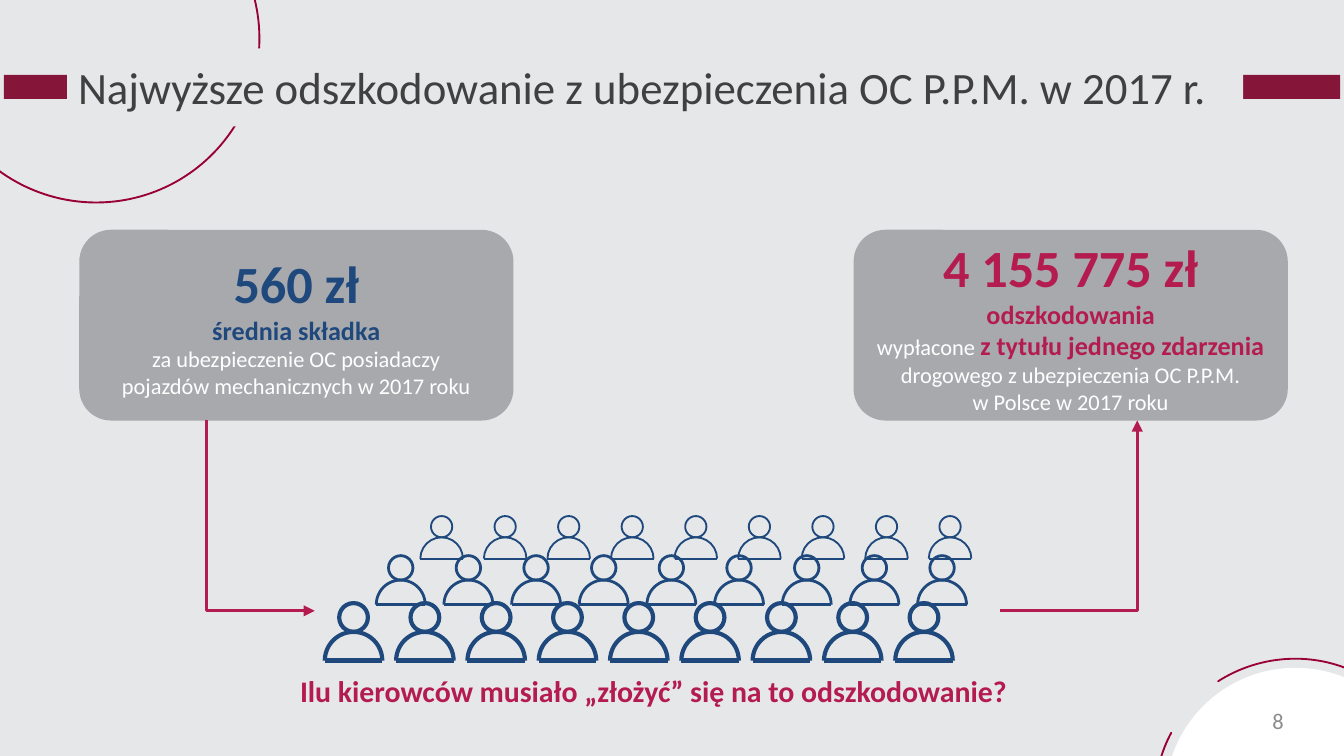
from pptx import Presentation
from pptx.dml.color import RGBColor
from pptx.enum.shapes import MSO_CONNECTOR, MSO_SHAPE
from pptx.enum.text import MSO_ANCHOR, MSO_AUTO_SIZE, PP_ALIGN
from pptx.oxml.ns import qn
from pptx.util import Pt
from lxml import etree

ARC, RECT, OVAL = MSO_SHAPE.BLOCK_ARC, MSO_SHAPE.RECTANGLE, MSO_SHAPE.OVAL
ROUNDED = MSO_SHAPE.ROUNDED_RECTANGLE
STRAIGHT, ELBOW = MSO_CONNECTOR.STRAIGHT, MSO_CONNECTOR.ELBOW
LEFT, CENTER, RIGHT = PP_ALIGN.LEFT, PP_ALIGN.CENTER, PP_ALIGN.RIGHT
TOP, MIDDLE = MSO_ANCHOR.TOP, MSO_ANCHOR.MIDDLE

FONT = "Calibri"
BACKGROUND, WHITE, GREY = "E6E7E9", "FFFFFF", "A8A9AD"
BURGUNDY, ARC_LINE = "86153A", "990033"
CRIMSON, NAVY = "B41C4F", "1F497D"

# Each line is a list of runs: text, size, colour, bold
PREMIUM = [
    [("560 zł", 28, NAVY, True)],
    [("średnia składka", 14, NAVY, True)],
    [("za ubezpieczenie OC posiadaczy", 12, WHITE, False)],
    [("pojazdów mechanicznych w 2017 roku", 12, WHITE, False)],
]
COMPENSATION = [
    [("4 155 775 zł", 28, CRIMSON, True)],
    [("odszkodowania", 14, CRIMSON, True)],
    [("wypłacone ", 12, WHITE, False),
     ("z tytułu jednego zdarzenia", 14, CRIMSON, True)],
    [("drogowego z ubezpieczenia OC P.P.M.", 12, WHITE, False)],
    [("w Polsce w 2017 roku", 12, WHITE, False)],
]

# Rows of drivers, back to front: left, top, head diameter, step, line width
DRIVERS_PER_ROW = 9
DRIVER_ROWS = [
    (225.2, 276.5, 11.4, 34.05, 1),
    (201.6, 297.7, 13.1, 36.25, 1.5),
    (174, 323.1, 15.4, 38.2, 2.25),
]


def rgb(color):
    return RGBColor.from_string(color)


def style_font(font, size, color, bold=False):
    font.name, font.size, font.bold = FONT, Pt(size), bold
    font.color.rgb = rgb(color)


def add_shape(shapes, kind, left, top, width, height, fill=None, line=None,
              line_width=1):
    shape = shapes.add_shape(kind, Pt(left), Pt(top), Pt(width), Pt(height))
    shape.shadow.inherit = False
    if fill:
        shape.fill.solid()
        shape.fill.fore_color.rgb = rgb(fill)
    else:
        shape.fill.background()
    if line:
        shape.line.color.rgb = rgb(line)
        shape.line.width = Pt(line_width)
    else:
        shape.line.fill.background()
    return shape


def add_arc(shapes, left, top, width, height, rotation, start):
    arc = add_shape(shapes, ARC, left, top, width, height, BURGUNDY, ARC_LINE)
    arc.rotation = rotation
    for index, value in enumerate((start, 1.76, 0)):
        arc.adjustments[index] = value


def add_line(shapes, kind, start, end, color, width):
    line = shapes.add_connector(kind, *(Pt(value) for value in start + end))
    line.line.color.rgb = rgb(color)
    line.line.width = Pt(width)
    etree.SubElement(line.element.spPr, qn("a:effectLst"))
    return line


def add_elbow(shapes, start, end, arrow_end):
    """Run horizontally from start, then vertically to end."""
    elbow = add_line(shapes, ELBOW, start, end, CRIMSON, 1.5)
    bend = elbow.element.spPr.find(qn("a:prstGeom")).find(qn("a:avLst"))
    etree.SubElement(bend, qn("a:gd"), name="adj1", fmla="val 100000")
    outline = elbow.element.spPr.find(qn("a:ln"))
    etree.SubElement(outline, qn(f"a:{arrow_end}"), type="triangle")


def add_text(shapes, text, left, top, width, height, size, color, align,
             anchor=TOP, bold=False):
    box = shapes.add_textbox(Pt(left), Pt(top), Pt(width), Pt(height))
    frame = box.text_frame
    frame.word_wrap = True
    frame.vertical_anchor = anchor
    frame.text = text
    paragraph = frame.paragraphs[0]
    paragraph.alignment = align
    style_font(paragraph.font, size, color, bold)
    return box


def add_card(shapes, left, lines):
    card = add_shape(shapes, ROUNDED, left, 123.1, 232.6, 102.2, GREY)
    frame = card.text_frame
    frame.word_wrap = False
    frame.vertical_anchor = MIDDLE
    for index, runs in enumerate(lines):
        paragraph = frame.add_paragraph() if index else frame.paragraphs[0]
        paragraph.alignment = CENTER
        for text, size, color, bold in runs:
            run = paragraph.add_run()
            run.text = text
            style_font(run.font, size, color, bold)


def add_driver(shapes, left, top, head, width):
    waist = top + 2 * head
    add_shape(shapes, OVAL, left + head / 2, top, head, head, None, NAVY, width)
    add_shape(shapes, OVAL, left, top + head, 2 * head, 2 * head, None, NAVY,
              width)
    # Cover the lower half of the body
    add_shape(shapes, RECT, left - head / 8, waist, 2.25 * head, 1.13 * head,
              BACKGROUND)
    add_line(shapes, STRAIGHT, (left, waist), (left + 2 * head, waist), NAVY,
             width)


def add_decoration(shapes):
    add_arc(shapes, -36.7, -67.3, 175.7, 176.4, 12.3, 170.46)
    add_arc(shapes, -36.7, -67.7, 175.7, 176.4, 132.3, 155.79)
    add_shape(shapes, RECT, 2, 40.2, 716, 12.8, BURGUNDY)
    add_arc(shapes, 618.5, 354.2, 151.9, 148.3, 205.2, 170.46)
    add_arc(shapes, 616.3, 353.5, 151.9, 148.3, 325.2, 163.48)
    add_shape(shapes, OVAL, 624.2, 357.8, 139.7, 139.7, WHITE)


def set_title(slide, text):
    title = slide.shapes.title
    title.left, title.top, title.width, title.height = (
        Pt(36), Pt(25.9), Pt(630), Pt(41.8))
    title.fill.solid()
    title.fill.fore_color.rgb = rgb(BACKGROUND)
    frame = title.text_frame
    frame.text = text
    frame.auto_size = MSO_AUTO_SIZE.NONE
    frame.vertical_anchor = TOP
    frame.margin_left = frame.margin_right = Pt(5.8)
    frame.margin_top, frame.margin_bottom = Pt(2.9), Pt(8.6)
    paragraph = frame.paragraphs[0]
    paragraph.alignment = LEFT
    paragraph.line_spacing = Pt(32)
    style_font(paragraph.font, 24, "404040")
    # Bring the title in front of the decoration
    slide.shapes.element.append(title.element)


def main():
    deck = Presentation()
    deck.slide_width, deck.slide_height = Pt(720), Pt(405)
    slide = deck.slides.add_slide(deck.slide_layouts[5])
    slide.background.fill.solid()
    slide.background.fill.fore_color.rgb = rgb(BACKGROUND)
    shapes = slide.shapes

    # Frame of the slide
    add_decoration(shapes)
    set_title(slide,
              "Najwyższe odszkodowanie z ubezpieczenia OC P.P.M. w 2017 r.")
    add_text(shapes, "8", 595.4, 375.1, 99.4, 21.6, 12, "8C8C8C", RIGHT, MIDDLE)

    # Amounts
    add_card(shapes, 457.3, COMPENSATION)
    add_card(shapes, 42.5, PREMIUM)

    # Crowd of drivers
    crowd = shapes.add_group_shape().shapes
    for left, top, head, step, width in DRIVER_ROWS:
        for index in range(DRIVERS_PER_ROW):
            add_driver(crowd, left + index * step, top, head, width)

    # Question below the crowd
    question = add_text(
        shapes, "Ilu kierowców musiało „złożyć” się na to odszkodowanie?",
        117.4, 357.1, 458.6, 28.8, 16, CRIMSON, CENTER, bold=True)
    question.text_frame.margin_right = 0
    question.text_frame.paragraphs[0].space_before = Pt(3)

    # Arrows from the premium to the crowd and on to the compensation
    add_elbow(shapes, (168.6, 327.3), (110.7, 225.3), "headEnd")
    add_elbow(shapes, (535.7, 327), (609.3, 225.3), "tailEnd")

    deck.save("out.pptx")


if __name__ == "__main__":
    main()
